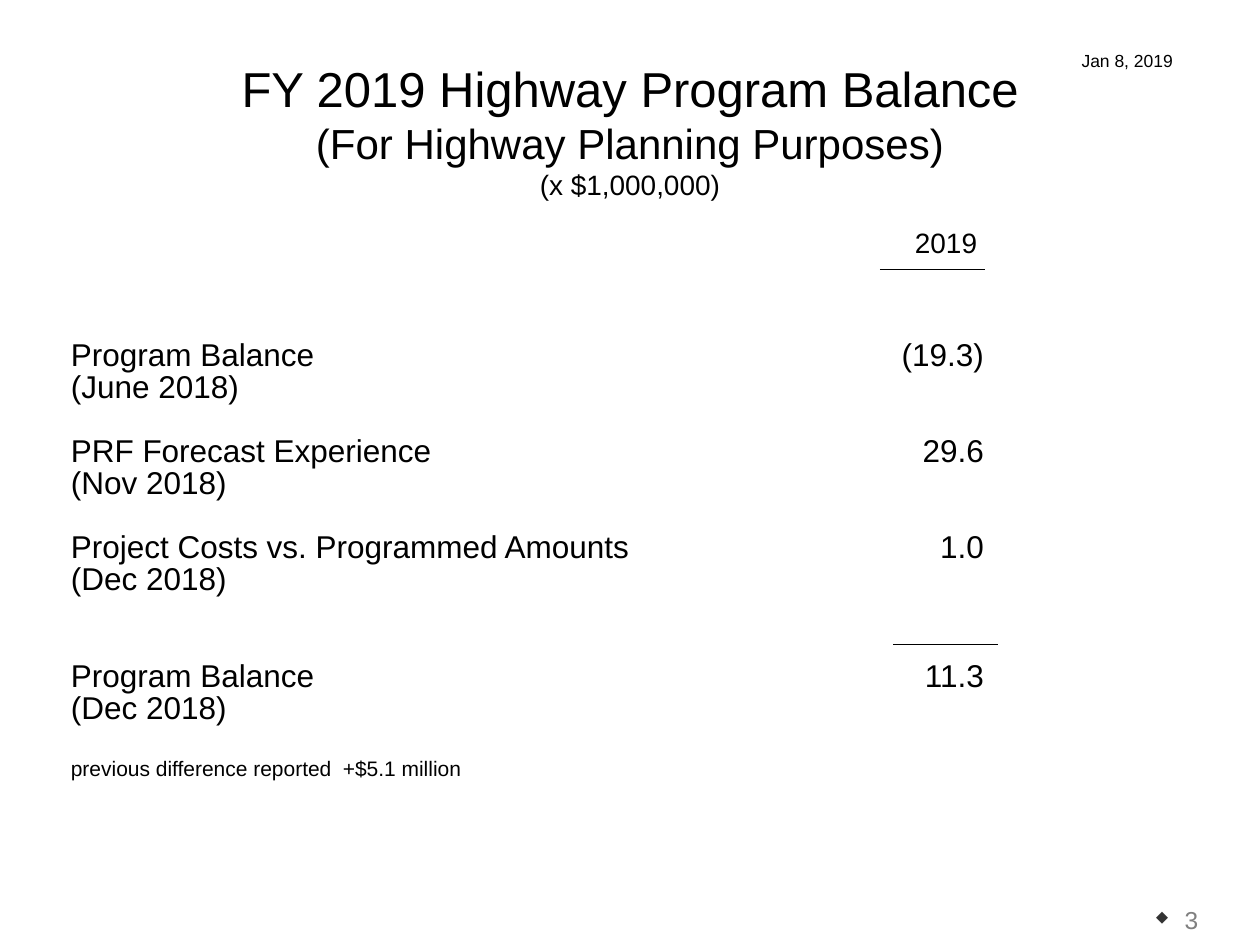
from lxml.etree import SubElement
from pptx import Presentation
from pptx.dml.color import RGBColor
from pptx.enum.shapes import MSO_CONNECTOR as Connector
from pptx.enum.text import MSO_ANCHOR as Anchor, MSO_AUTO_SIZE as AutoSize, PP_ALIGN as Align
from pptx.oxml.ns import qn
from pptx.util import Pt

COLORS = {"text": "000000", "page": "808080", "bullet": "333333", "rule": "000000"}
FONT = "Arial"
LINE_PITCH = 18.35
LABEL_TAB = (22.6, "l")
AMOUNT_TAB = (544.3, "r")
DIFFERENCE_TAB = (178, "l")

HEADING = [  # text, size
    ("FY 2019 Highway Program Balance", 28),
    ("(For Highway Planning Purposes)", 24),
    ("(x $1,000,000)", 16),
]
LEDGER = [  # label, amount, month, space before
    ("Program Balance", "(19.3)", "June 2018", 0),
    ("PRF Forecast Experience", "29.6", "Nov 2018", LINE_PITCH),
    ("Project Costs vs. Programmed Amounts", "1.0", "Dec 2018", LINE_PITCH),
    ("Program Balance", "11.3", "Dec 2018", 2 * LINE_PITCH),
]
FOOTNOTE = "\tprevious difference reported\t+$5.1 million"


def place(shape, box, top_inset=3.6, anchor=Anchor.TOP):
    shape.left, shape.top, shape.width, shape.height = map(Pt, box)
    frame = shape.text_frame
    frame.word_wrap = True
    frame.auto_size = AutoSize.NONE
    frame.vertical_anchor = anchor
    frame.margin_top = Pt(top_inset)
    return frame


def write(paragraph, text, size, align=Align.LEFT, before=0, color="text"):
    paragraph.text = text
    paragraph.alignment = align
    paragraph.space_before = Pt(before)
    for run in paragraph.runs:
        run.font.name = FONT
        run.font.size = Pt(size)
        run.font.color.rgb = RGBColor.from_string(COLORS[color])


def next_paragraph(frame, index):
    return frame.paragraphs[0] if index == 0 else frame.add_paragraph()


def set_tabs(paragraph, stops):
    tab_list = SubElement(paragraph._p.get_or_add_pPr(), qn("a:tabLst"))
    for position, align in stops:
        SubElement(tab_list, qn("a:tab"), pos=str(Pt(position)), algn=align)


def add_heading(slide, box):
    frame = place(slide.shapes.title, box, top_inset=3.4)
    for index, (text, size) in enumerate(HEADING):
        write(next_paragraph(frame, index), text, size, Align.CENTER)


def add_ledger(slide, box):
    frame = place(slide.shapes.add_textbox(0, 0, 0, 0), box, top_inset=10.2)
    entries = [(f"\t{label}\t{amount}\v\t({month})", 18, before, AMOUNT_TAB)
               for label, amount, month, before in LEDGER]
    entries.append((FOOTNOTE, 12, 13.4, DIFFERENCE_TAB))
    for index, (text, size, before, second_tab) in enumerate(entries):
        paragraph = next_paragraph(frame, index)
        write(paragraph, text, size, before=before)
        paragraph.line_spacing = Pt(LINE_PITCH)
        set_tabs(paragraph, [LABEL_TAB, second_tab])


def add_year(slide, box):
    frame = place(slide.shapes.add_textbox(0, 0, 0, 0), box)
    year = frame.paragraphs[0]
    write(year, "\t2019", 16)
    set_tabs(year, [(522, "ctr")])


def add_rule(slide, left, top, width):
    rule = slide.shapes.add_connector(
        Connector.STRAIGHT, Pt(left), Pt(top), Pt(left + width), Pt(top))
    rule.line.color.rgb = RGBColor.from_string(COLORS["rule"])
    rule.line.width = Pt(0.75)
    SubElement(rule._element.spPr, qn("a:effectLst"))


def add_date(slide, box):
    frame = place(slide.shapes.add_textbox(0, 0, 0, 0), box, top_inset=3.3)
    write(frame.paragraphs[0], "Jan 8, 2019", 10, Align.CENTER)


def add_page_number(slide, box):
    frame = place(slide.shapes.add_textbox(0, 0, 0, 0), box, anchor=Anchor.BOTTOM)
    number = frame.paragraphs[0]
    write(number, "3", 14, Align.RIGHT, color="page")
    # Small diamond hanging to the left of the number
    properties = number._p.get_or_add_pPr()
    properties.set("marL", str(Pt(17)))
    properties.set("indent", str(Pt(-17)))
    bullet_color = SubElement(properties, qn("a:buClr"))
    SubElement(bullet_color, qn("a:srgbClr"), val=COLORS["bullet"])
    SubElement(properties, qn("a:buSzPct"), val="60000")
    SubElement(properties, qn("a:buFont"), typeface="Wingdings", charset="2")
    SubElement(properties, qn("a:buChar"), char="u")


def main():
    deck = Presentation()
    deck.slide_width, deck.slide_height = Pt(720), Pt(540)
    slide = deck.slides.add_slide(deck.slide_layouts[5])

    add_page_number(slide, (519.1, 501.8, 172.8, 36))
    add_ledger(slide, (10.8, 184.3, 702, 336.2))
    add_heading(slide, (0, 30.2, 720, 108))
    add_year(slide, (11.5, 125.3, 708.5, 46))
    # Rules above the total and below the year
    for left, top in [(510.4, 368.5), (502.8, 154)]:
        add_rule(slide, left, top, 60)
    add_date(slide, (586.8, 25.2, 114.5, 19.4))

    deck.save("out.pptx")


if __name__ == "__main__":
    main()
